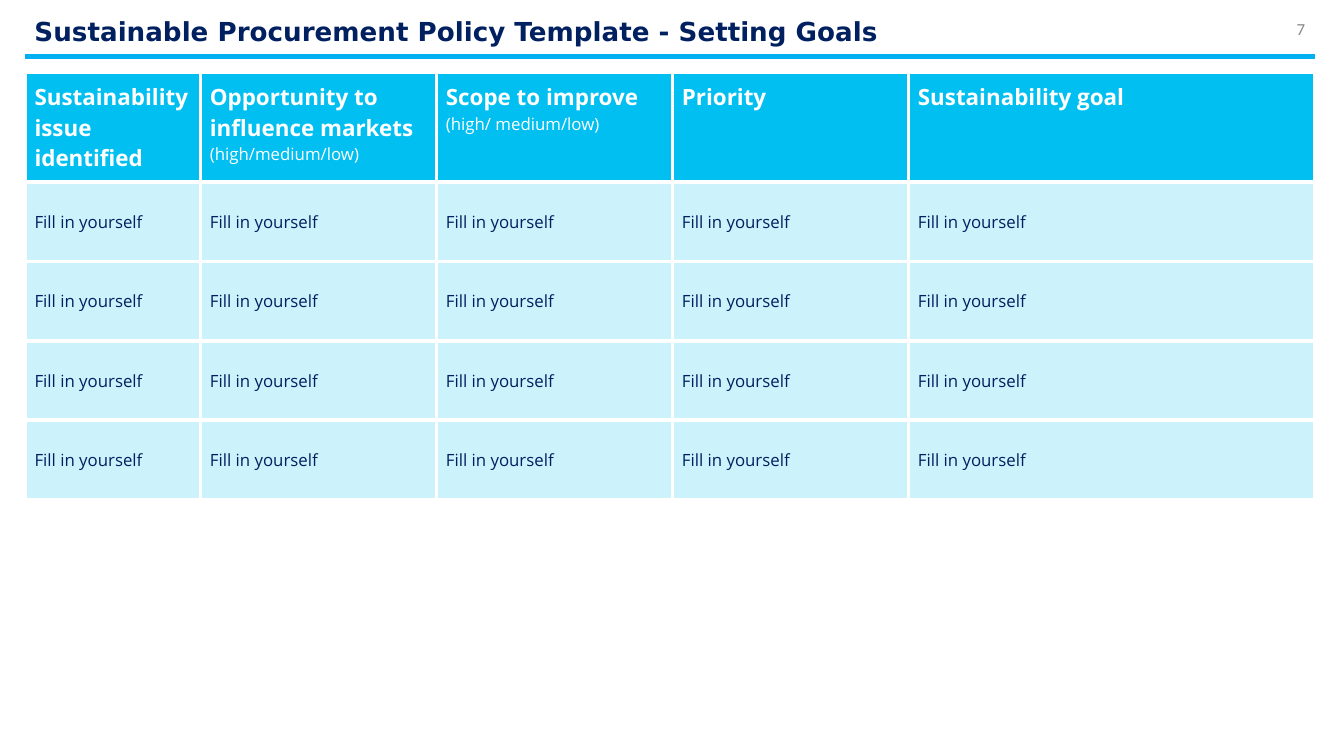
from lxml import etree
from pptx import Presentation
from pptx.dml.color import RGBColor
from pptx.enum.shapes import MSO_CONNECTOR
from pptx.enum.text import MSO_ANCHOR, PP_ALIGN
from pptx.oxml.ns import qn
from pptx.util import Inches, Pt

STRAIGHT = MSO_CONNECTOR.STRAIGHT
TOP, MIDDLE = MSO_ANCHOR.TOP, MSO_ANCHOR.MIDDLE
LEFT, RIGHT = PP_ALIGN.LEFT, PP_ALIGN.RIGHT

WIDE = Inches(10)
HIGH = WIDE * 9 // 16
EDGE, SPAN = 1.87, 96
NAVY, WHITE, SKY, CYAN, PALE = "002060", "FFFFFF", "00B0F0", "01BFF0", "CCF2FC"

COLS = [13.05] + [17.56] * 3 + [30.25]
ROWS = [14.5] + [10.5] * 4
HEADS = [
    ["Sustainability issue identified"],
    ["Opportunity to influence markets", "(high/medium/low)"],
    ["Scope to improve", "(high/ medium/low)"],
    ["Priority"],
    ["Sustainability goal"],
]


def across(share):
    return round(WIDE * share / 100)


def down(share):
    return round(HIGH * share / 100)


def color(code):
    return RGBColor.from_string(code)


def write(par, text, size=9, font="Open Sans", ink=NAVY, bold=False,
          align=LEFT, indent=0, lead=1.0):
    props = par._p.get_or_add_pPr()
    props.set("marL", str(Inches(indent)))
    props.set("indent", "0")
    par.alignment = align
    par.line_spacing = lead
    run = par.add_run()
    run.text = text
    run.font.size = Pt(size)
    run.font.name = font
    run.font.bold = bold
    run.font.color.rgb = color(ink)


def label(slide, left, top, width, height, text, **style):
    box = slide.shapes.add_textbox(across(left), down(top), across(width), down(height))
    frame = box.text_frame
    frame.word_wrap = True
    frame.vertical_anchor = MIDDLE
    frame.margin_left = frame.margin_right = Inches(0.07)
    frame.margin_top = frame.margin_bottom = Inches(0.04)
    write(frame.paragraphs[0], text, **style)


def rule(slide, top):
    line = slide.shapes.add_connector(
        STRAIGHT, across(EDGE), down(top), across(EDGE + SPAN), down(top))
    line.line.color.rgb = color(SKY)
    line.line.width = Pt(3)
    etree.SubElement(line._element.spPr, qn("a:effectLst"))


def border(cell):
    props = cell._tc.get_or_add_tcPr()
    for side in "LRTB":
        edge = etree.SubElement(props, qn("a:ln" + side), w=str(Pt(2.25)))
        fill = etree.SubElement(edge, qn("a:solidFill"))
        etree.SubElement(fill, qn("a:srgbClr"), val=WHITE)


def dress(cell, fill, anchor, pad):
    border(cell)
    cell.fill.solid()
    cell.fill.fore_color.rgb = color(fill)
    cell.vertical_anchor = anchor
    cell.margin_left = cell.margin_right = 0
    cell.margin_top = cell.margin_bottom = Inches(pad)


def head(cell, lines):
    dress(cell, CYAN, TOP, 0.07)
    frame = cell.text_frame
    write(frame.paragraphs[0], lines[0], size=12, ink=WHITE, bold=True, indent=0.07)
    for note in lines[1:]:
        write(frame.add_paragraph(), note, ink=WHITE, indent=0.07)


def entry(cell):
    dress(cell, PALE, MIDDLE, 0.03)
    write(cell.text_frame.paragraphs[0], "Fill in yourself", indent=0.07)


def goals(slide, top):
    table = slide.shapes.add_table(
        len(ROWS), len(COLS), across(EDGE), down(top),
        across(sum(COLS)), down(sum(ROWS))).table
    for col, share in zip(table.columns, COLS):
        col.width = across(share)
    for row, share in zip(table.rows, ROWS):
        row.height = down(share)
    for c, lines in enumerate(HEADS):
        head(table.cell(0, c), lines)
        for r in range(1, len(ROWS)):
            entry(table.cell(r, c))


def main():
    deck = Presentation()
    deck.slide_width, deck.slide_height = WIDE, HIGH
    slide = deck.slides.add_slide(deck.slide_layouts[6])
    rule(slide, 7.5)
    label(slide, EDGE, 1.7, SPAN, 5.3,
          "Sustainable Procurement Policy Template - Setting Goals",
          size=14, font="DejaVu Sans", bold=True, lead=0.9)
    goals(slide, 9.6)
    label(slide, 93.3, 2.1, 4.5, 3.4, "7", font="Calibri", ink="888888", align=RIGHT)
    deck.save("out.pptx")


if __name__ == "__main__":
    main()
